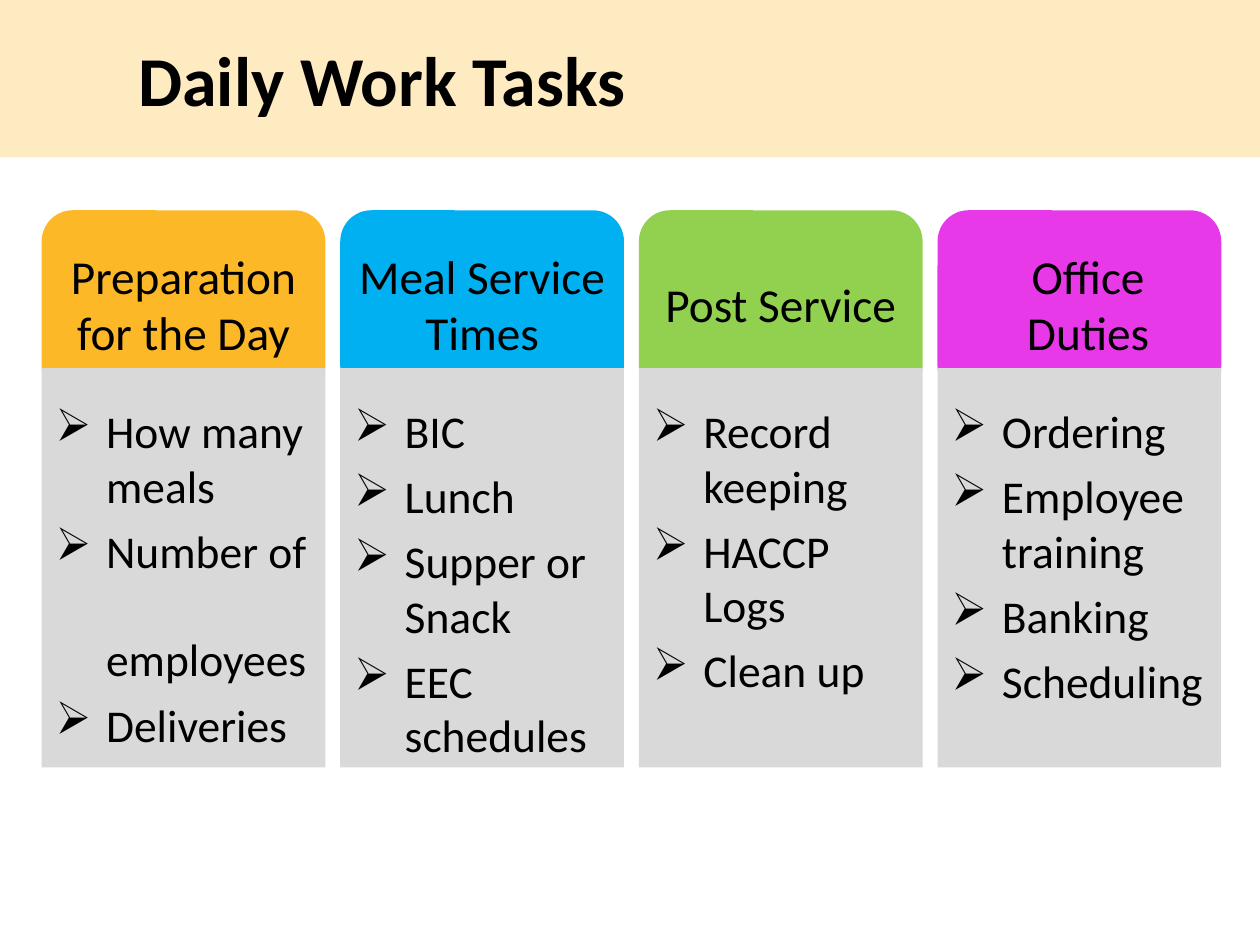
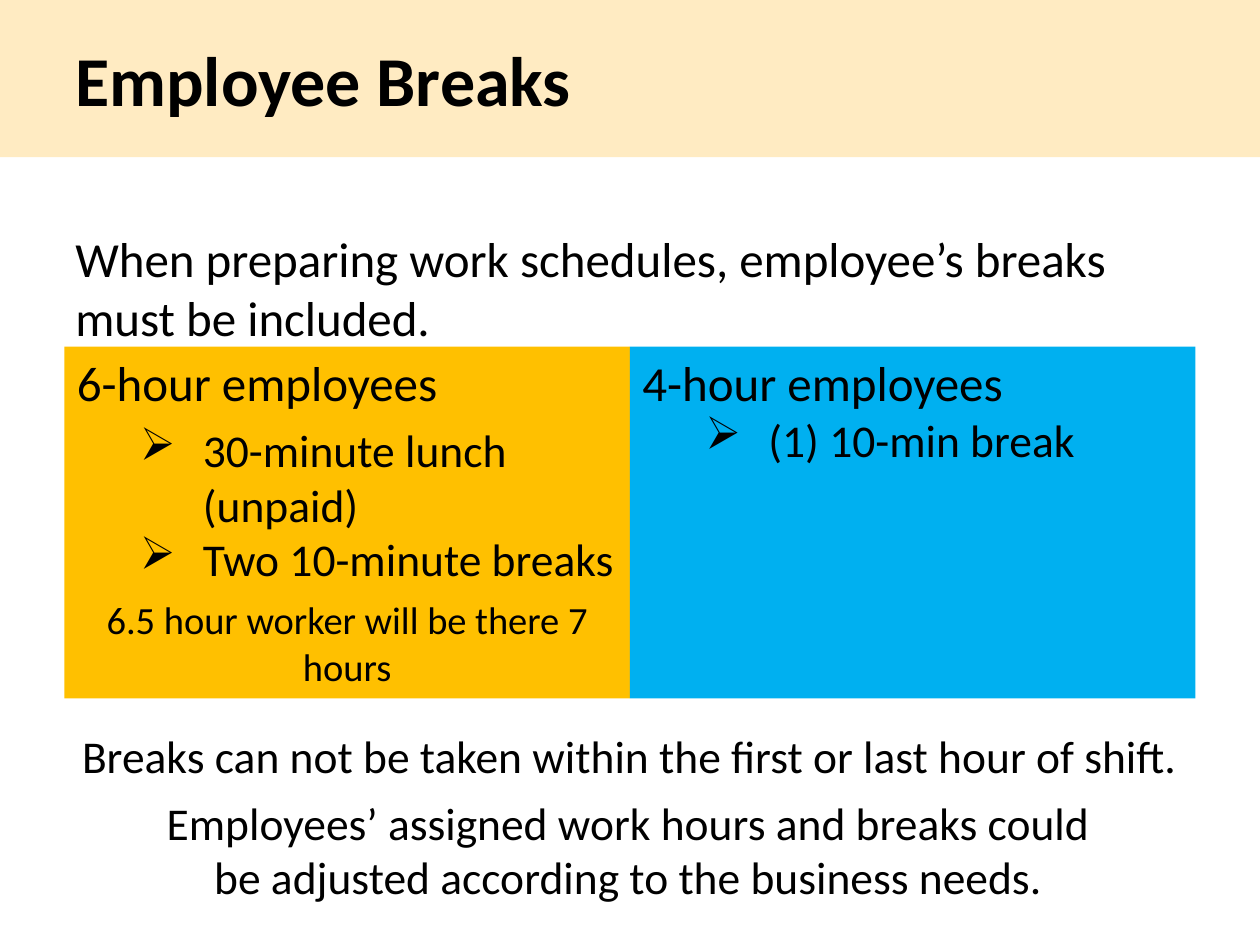
from lxml import etree
from pptx import Presentation
from pptx.dml.color import RGBColor
from pptx.enum.shapes import MSO_SHAPE
from pptx.enum.text import MSO_ANCHOR, MSO_AUTO_SIZE, PP_ALIGN
from pptx.oxml.ns import qn
from pptx.util import Cm, Pt

RECT, ROUNDED = MSO_SHAPE.RECTANGLE, MSO_SHAPE.ROUNDED_RECTANGLE
TOP, MIDDLE = MSO_ANCHOR.TOP, MSO_ANCHOR.MIDDLE
LEFT, CENTER = PP_ALIGN.LEFT, PP_ALIGN.CENTER
NO_AUTOFIT = MSO_AUTO_SIZE.NONE

THEME = {
    "font": "Calibri",
    "text": "000000",
    "band": "FFEBC2",
    "panel": "D9D9D9",
    "preparation": "FDB827",
    "meals": "00B0F0",
    "post": "92D050",
    "office": "E739E7",
    "six_hour": "FFC000",
    "four_hour": "00B0F0",
    "title_size": 40,
    "lead_size": 28,
    "heading_size": 27,
    "body_size": 26,
    "note_size": 22,
}
INSET = Cm(0.25)


def write(shape, paragraphs, anchor=TOP, inset=INSET):
    """Fill a shape with (text, size key, formats) paragraphs."""
    frame = shape.text_frame
    frame_format = {"word_wrap": True, "auto_size": NO_AUTOFIT, "vertical_anchor": anchor,
                    "margin_left": inset, "margin_right": min(inset, INSET)}
    for name, value in frame_format.items():
        setattr(frame, name, value)
    for number, (text, size, formats) in enumerate(paragraphs):
        paragraph = frame.add_paragraph() if number else frame.paragraphs[0]
        paragraph.text = text
        properties = paragraph._p.get_or_add_pPr()
        layout = {"alignment": LEFT, **formats}
        indent, hanging = layout.pop("indent", (0, 0))
        properties.set("marL", str(Cm(indent)))
        properties.set("indent", str(-Cm(hanging)))
        if layout.pop("bullet", False):
            etree.SubElement(properties, qn("a:buChar")).set("char", "➢")
        for name, value in layout.items():
            setattr(paragraph, name, value)
        font_format = {"name": THEME["font"], "size": Pt(THEME[size]),
                       "bold": size == "title_size"}
        for name, value in font_format.items():
            setattr(paragraph.font, name, value)
        paragraph.font.color.rgb = RGBColor.from_string(THEME["text"])


def add_block(slide, kind, box, color):
    """Add a plain filled shape without outline or shadow."""
    block = slide.shapes.add_shape(kind, *map(Cm, box))
    block.shadow.inherit = False
    block.fill.solid()
    block.fill.fore_color.rgb = RGBColor.from_string(THEME[color])
    block.line.fill.background()
    return block


deck = Presentation()
deck.slide_width, deck.slide_height = Cm(25.4), Cm(19.05)

# Title bands
slides = []
for heading, title_inset in (("Daily Work Tasks", 2.79), ("Employee Breaks", 1.52)):
    slide = deck.slides.add_slide(deck.slide_layouts[5])
    title = slide.shapes.title
    band_box = {"left": 0, "top": 0, "width": deck.slide_width, "height": Cm(3.17)}
    for name, value in band_box.items():
        setattr(title, name, value)
    title.fill.solid()
    title.fill.fore_color.rgb = RGBColor.from_string(THEME["band"])
    write(title, [(heading, "title_size", {})], MIDDLE, Cm(title_inset))
    slides.append(slide)
tasks_slide, breaks_slide = slides

# Daily tasks: four columns, each a coloured tab over a grey panel
TASK_BULLET = {"bullet": True, "indent": (1.02, 1.02), "space_after": Pt(6)}
CONTINUATION = {"indent": (1.02, 0), "space_before": Pt(25), "space_after": Pt(6)}
COLUMN_LEFT, COLUMN_PITCH, COLUMN_WIDTH = 0.84, 6.02, 5.72
task_columns = [
    ("Preparation for the Day", "preparation", INSET,
     ["How many meals", "Number of", "employees", "Deliveries"]),
    ("Meal Service Times", "meals", 0,
     ["BIC", "Lunch", "Supper or Snack", "EEC schedules"]),
    ("Post Service", "post", 0, ["Record keeping", "HACCP Logs", "Clean up"]),
    ("Office Duties", "office", Cm(0.6),
     ["Ordering", "Employee training", "Banking", "Scheduling"]),
]
for column, (heading, color, inset, tasks) in enumerate(task_columns):
    left = COLUMN_LEFT + column * COLUMN_PITCH
    tab = add_block(tasks_slide, ROUNDED, (left, 4.24, COLUMN_WIDTH, 3.76), color)
    write(tab, [(heading, "heading_size", {"alignment": CENTER})], MIDDLE, inset)
    add_block(tasks_slide, RECT, (left, 7.42, COLUMN_WIDTH, 8.05), "panel")
    task_list = tasks_slide.shapes.add_textbox(
        *map(Cm, (left + 0.03, 8, COLUMN_WIDTH, 7.4)))
    write(task_list, [(task, "body_size", CONTINUATION if task == "employees" else TASK_BULLET)
                      for task in tasks])

# Employee breaks: lead sentence and rules below the panels
statements = [
    ("When preparing work schedules, employee’s breaks must be included.",
     (1.27, 4.48, 22.83, 2.46), "lead_size", LEFT),
    ("Breaks can not be taken within the first or last hour of shift.",
     (1.27, 14.55, 22.86, 1.37), "body_size", CENTER),
    ("Employees’ assigned work hours and breaks could be adjusted according to "
     "the business needs.", (2.69, 15.9, 19.96, 2.49), "body_size", CENTER),
]
for text, box, size, alignment in statements:
    statement = breaks_slide.shapes.add_textbox(*map(Cm, box))
    write(statement, [(text, size, {"alignment": alignment})])

# Employee breaks: one panel per shift length
BREAK_BULLET = {"bullet": True, "indent": (2.54, 1.27)}
SPACED = {"space_after": Pt(6)}
shift_panels = [
    ("six_hour", [
        ("6-hour employees", "lead_size", SPACED),
        ("30-minute lunch (unpaid)", "body_size", BREAK_BULLET),
        ("Two 10-minute breaks", "body_size", {**BREAK_BULLET, **SPACED}),
        ("6.5 hour worker will be there 7 hours", "note_size",
         {"alignment": CENTER, **SPACED}),
    ]),
    ("four_hour", [
        ("4-hour employees", "lead_size", {}),
        ("(1) 10-min break", "body_size", {**BREAK_BULLET, **SPACED}),
    ]),
]
SHIFT_WIDTH = 11.4
for position, (color, lines) in enumerate(shift_panels):
    shift = add_block(breaks_slide, RECT,
                      (1.3 + position * SHIFT_WIDTH, 6.99, SHIFT_WIDTH, 7.09), color)
    write(shift, lines)

deck.save("out.pptx")
